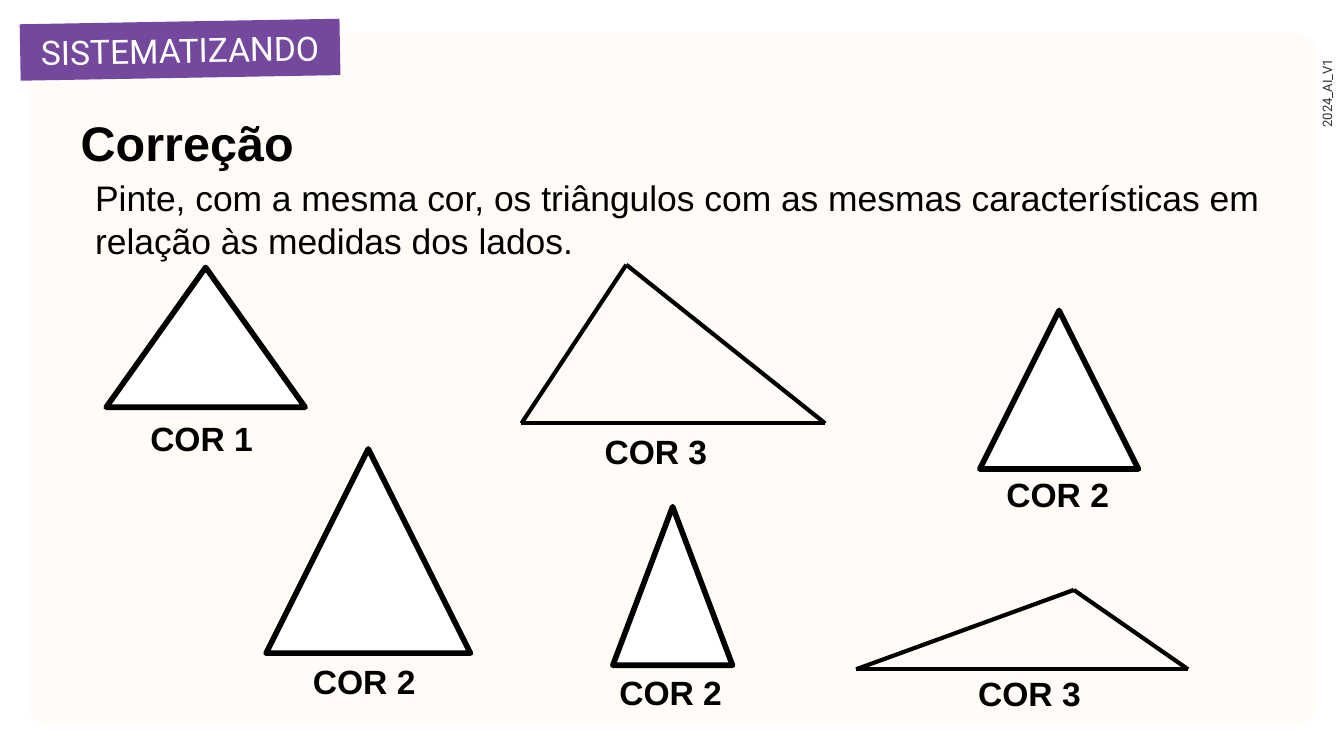
from dataclasses import dataclass

from lxml import etree
from pptx import Presentation
from pptx import util as u
from pptx.dml.color import RGBColor
from pptx.enum import shapes, text
from pptx.oxml import ns

# The page is a grid of 100 columns by 56.25 rows of square cells (16:9)
COLUMNS, ROWS = 100, 56.25
CELL = u.Inches(0.1)

BLACK = RGBColor(0x00, 0x00, 0x00)
WHITE = RGBColor(0xFF, 0xFF, 0xFF)
CREAM = RGBColor(0xFF, 0xFC, 0xF8)
PURPLE = RGBColor(0x74, 0x48, 0x9D)
GREY = RGBColor(0x33, 0x33, 0x33)


@dataclass(frozen=True)
class Area:
    column: float
    row: float
    columns: float
    rows: float

    def lengths(self) -> tuple:
        return tuple(cells(n) for n in (self.column, self.row, self.columns, self.rows))


@dataclass(frozen=True)
class Label:
    words: str
    column: float
    row: float


@dataclass(frozen=True)
class Isosceles:
    area: Area
    label: Label


@dataclass(frozen=True)
class Scalene:
    corners: tuple  # left, top and right corner as (column, row)
    label: Label


ISOSCELES = [
    Isosceles(Area(7.9, 19.9, 14.8, 10.4), Label("COR 1", 10.2, 30.6)),
    Isosceles(Area(45.6, 37.7, 8.9, 11.8), Label("COR 2", 45.1, 49.5)),
    Isosceles(Area(19.8, 33.4, 15.2, 15.2), Label("COR 2", 22.3, 48.7)),
    Isosceles(Area(72.9, 23.1, 11.8, 11.8), Label("COR 2", 73.9, 34.8)),
]
SCALENE = [
    Scalene(((38.8, 31.5), (46.6, 19.7), (61.4, 31.5)), Label("COR 3", 44, 31.6)),
    Scalene(((63.7, 49.8), (79.9, 43.9), (88.4, 49.8)), Label("COR 3", 71.8, 49.6)),
]


def cells(count: float) -> int:
    return round(count * CELL)


def write(box, words: str, size: float, color: RGBColor, font: str = "Arial",
          bold: bool = False, inset: float = 1, wrap: bool = True):
    """Put one formatted paragraph in a shape and return the paragraph."""
    frame = box.text_frame
    frame.text = words
    frame.word_wrap = wrap
    frame.margin_left = frame.margin_right = cells(1)
    frame.margin_top = frame.margin_bottom = cells(inset)
    para = frame.paragraphs[0]
    span = para.runs[0].font
    span.name, span.size, span.bold = font, u.Pt(size), bold
    span.color.rgb = color
    return para


def add_filled(page, kind, area: Area, fill: RGBColor):
    shape = page.shapes.add_shape(kind, *area.lengths())
    shape.shadow.inherit = False
    shape.fill.solid()
    shape.fill.fore_color.rgb = fill
    shape.line.fill.background()
    return shape


def add_label(page, label: Label) -> None:
    box = page.shapes.add_textbox(*Area(label.column, label.row, 9.7, 4).lengths())
    write(box, label.words, 18, BLACK, bold=True, inset=0.5, wrap=False)


def add_isosceles(page, triangle: Isosceles) -> None:
    shape = add_filled(page, shapes.MSO_SHAPE.ISOSCELES_TRIANGLE, triangle.area, WHITE)
    shape.line.color.rgb = BLACK
    shape.line.width = u.Pt(3)
    outline = shape.element.spPr.find(ns.qn("a:ln"))
    etree.SubElement(outline, ns.qn("a:round"))


def add_scalene(page, triangle: Scalene) -> None:
    group = page.shapes.add_group_shape()
    corners = triangle.corners
    for start, end in zip(corners, corners[1:] + corners[:1]):
        side = group.shapes.add_connector(
            shapes.MSO_CONNECTOR.STRAIGHT, *(cells(n) for n in start + end))
        side.line.color.rgb = BLACK
        side.line.width = u.Pt(2.25)
        etree.SubElement(side.element.spPr, ns.qn("a:effectLst"))


def add_frame(page) -> None:
    """Cream card, section tag and version mark."""
    card = add_filled(page, shapes.MSO_SHAPE.ROUNDED_RECTANGLE,
                      Area(2.2, 2.5, 95.8, 51.4), CREAM)
    card.adjustments[0] = 0.03

    tag = add_filled(page, shapes.MSO_SHAPE.RECTANGLE, Area(1.5, 1.6, 23.8, 4.2), PURPLE)
    tag.rotation = 359
    para = write(tag, "SISTEMATIZANDO", 18, WHITE, font="Roboto", inset=0.6)
    para.alignment = text.PP_ALIGN.CENTER

    version = page.shapes.add_textbox(*Area(94.3, 4, 9.7, 3.2).lengths())
    version.rotation = 270
    write(version, "2024_AI_V1", 7, GREY, font="Roboto")


def add_texts(page) -> None:
    """Instruction and title, with the title brought in front of the card."""
    body = page.shapes.add_textbox(*Area(5, 12.1, 90.3, 37.5).lengths())
    para = write(body, "Pinte, com a mesma cor, os triângulos com as mesmas "
                 "características em relação às medidas dos lados.", 19, BLACK)
    para.space_after = u.Pt(6)
    para._p.get_or_add_pPr().set("marL", str(cells(1.1)))

    title = page.shapes.title
    title.left, title.top, title.width, title.height = Area(5, 7.4, 91.6, 6.4).lengths()
    para = write(title, "Correção", 26, BLACK, bold=True)
    para.alignment = text.PP_ALIGN.LEFT
    title.text_frame.vertical_anchor = text.MSO_ANCHOR.MIDDLE
    title.element.getparent().append(title.element)


def main() -> None:
    deck = Presentation()
    deck.slide_width, deck.slide_height = cells(COLUMNS), cells(ROWS)
    page = deck.slides.add_slide(deck.slide_layouts.get_by_name("Title Only"))

    add_frame(page)
    add_texts(page)

    # Triangles, then the colour labels on top
    for triangle in ISOSCELES:
        add_isosceles(page, triangle)
    for triangle in SCALENE:
        add_scalene(page, triangle)
    for triangle in ISOSCELES + SCALENE:
        add_label(page, triangle.label)

    deck.save("out.pptx")


if __name__ == "__main__":
    main()
